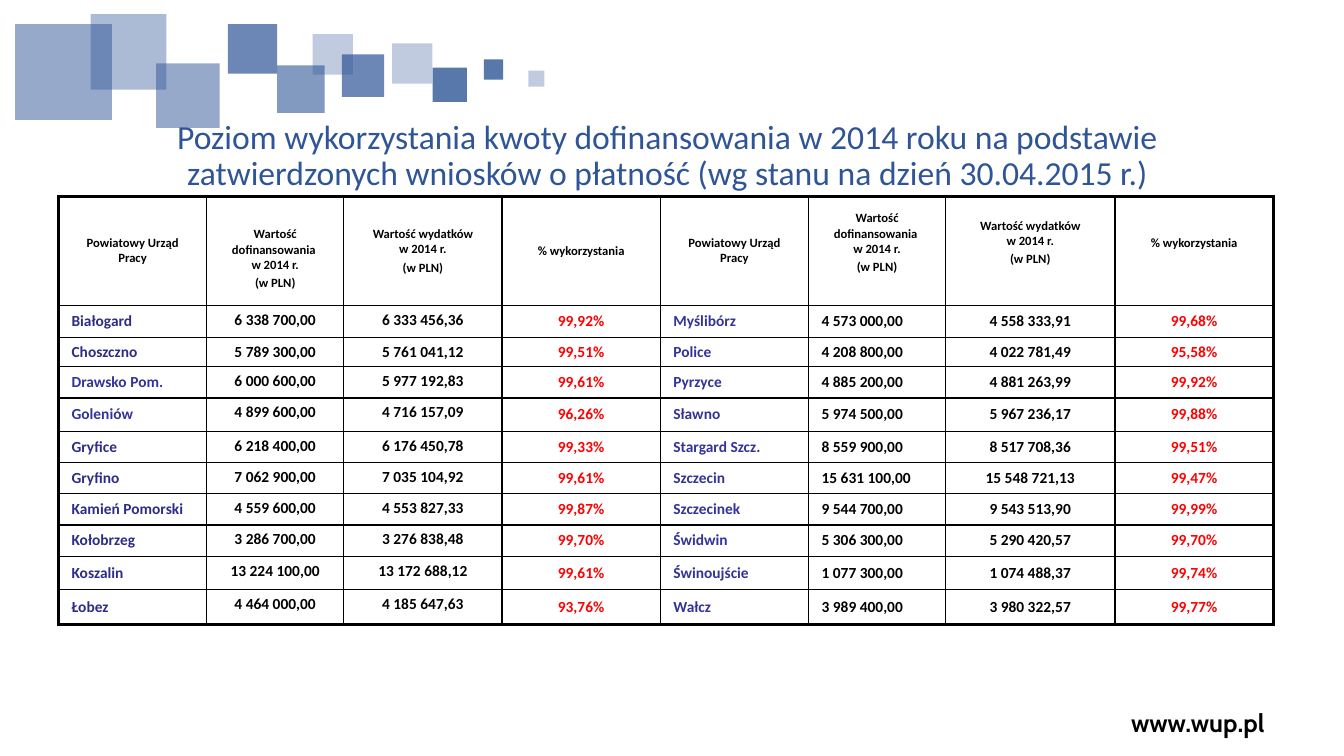
from dataclasses import dataclass

from lxml.etree import SubElement
from pptx import Presentation
from pptx.dml.color import RGBColor
from pptx.enum.shapes import MSO_SHAPE
from pptx.enum.text import MSO_ANCHOR, PP_ALIGN
from pptx.oxml.ns import qn
from pptx.util import Inches, Pt


@dataclass(frozen=True)
class Theme:
    blue: str = "2F5597"
    black: str = "000000"
    red: str = "FF0000"
    navy: str = "2D2D87"
    indigo: str = "333399"
    body_font: str = "Calibri"
    site_font: str = "Cabin"
    title_size: float = 24
    site_size: float = 18
    header_size: float = 9
    row_size: float = 11
    thin: float = 1
    thick: float = 2.25


theme = Theme()


def write(frame, text, size, color=theme.black, font=theme.body_font, bold=True,
          align=PP_ALIGN.CENTER, spacing=None, gap=0):
    """Fill a text frame: \\n starts a paragraph, \\v a new line within it."""
    frame.word_wrap = True
    for index, line in enumerate(text.split("\n")):
        paragraph = frame.paragraphs[0] if index == 0 else frame.add_paragraph()
        paragraph.text = line
        paragraph.alignment = align
        if spacing:
            paragraph.line_spacing = spacing
        if index and gap:
            paragraph.space_before = Pt(gap)
        for run in paragraph.runs:
            run.font.size = Pt(size)
            run.font.name = font
            run.font.bold = bold
            run.font.color.rgb = RGBColor.from_string(color)
        for line_break in paragraph._p.findall(qn("a:br")):
            SubElement(line_break, qn("a:rPr"), sz=str(int(size * 100)))


def set_border(cell, side, width):
    line = SubElement(cell._tc.get_or_add_tcPr(), qn(f"a:ln{side}"), w=str(Pt(width)))
    fill = SubElement(line, qn("a:solidFill"))
    SubElement(fill, qn("a:srgbClr"), val=theme.black)


presentation = Presentation()
presentation.slide_width = Inches(13.33)
presentation.slide_height = Inches(7.5)
slide = presentation.slides.add_slide(presentation.slide_layouts[5])

# Web address
site = slide.shapes.add_textbox(Inches(10.38), Inches(6.97), Inches(3), Inches(0.4))
site.text_frame.vertical_anchor = MSO_ANCHOR.MIDDLE
write(site.text_frame, "www.wup.pl", theme.site_size, font=theme.site_font)

# Translucent squares: left, top, width, height, opacity in percent
squares = [
    (3.89, 0.43, 0.4, 0.4, 30), (4.29, 0.67, 0.34, 0.34, 80),
    (3.39, 0.54, 0.42, 0.42, 70), (0.15, 0.24, 0.96, 0.95, 50),
    (2.75, 0.65, 0.47, 0.47, 60), (1.55, 0.63, 0.63, 0.64, 50),
    (0.9, 0.14, 0.75, 0.75, 40), (4.8, 0.59, 0.19, 0.2, 80),
    (2.26, 0.24, 0.49, 0.49, 70), (3.1, 0.34, 0.4, 0.4, 30),
    (5.24, 0.7, 0.16, 0.16, 30),
]
ornament = slide.shapes.add_group_shape()
for *box, opacity in squares:
    square = ornament.shapes.add_shape(MSO_SHAPE.RECTANGLE, *map(Inches, box))
    square.shadow.inherit = False
    square.line.fill.background()
    square.fill.solid()
    square.fill.fore_color.rgb = RGBColor.from_string(theme.blue)
    color_element = square._element.spPr.find(qn("a:solidFill"))[0]
    SubElement(color_element, qn("a:alpha"), val=str(opacity * 1000))

# Title, in front of the squares
title = slide.shapes.title
title.left, title.top, title.width, title.height = map(Inches, (0.58, 1.12, 12.08, 0.72))
slide.shapes._spTree.append(title._element)
heading = title.text_frame
heading.vertical_anchor = MSO_ANCHOR.TOP
heading.margin_left = heading.margin_right = Inches(0.13)
heading.margin_top = heading.margin_bottom = Inches(0.07)
write(heading,
      "Poziom wykorzystania kwoty dofinansowania w 2014 roku na podstawie "
      "zatwierdzonych wniosków o płatność (wg stanu na dzień 30.04.2015 r.)",
      theme.title_size, color=theme.blue, bold=False, spacing=0.9)

# Table content
headers = [
    "Powiatowy Urząd Pracy",
    "Wartość dofinansowania \vw 2014 r.\n(w PLN)",
    "Wartość wydatków\vw 2014 r.\n(w PLN)",
    "% wykorzystania",
] * 2
offices = [
    ("Białogard", "6 338 700,00", "6 333 456,36", "99,92%",
     "Myślibórz", "4 573 000,00", "4 558 333,91", "99,68%"),
    ("Choszczno", "5 789 300,00", "5 761 041,12", "99,51%",
     "Police", "4 208 800,00", "4 022 781,49", "95,58%"),
    ("Drawsko Pom.", "6 000 600,00", "5 977 192,83", "99,61%",
     "Pyrzyce", "4 885 200,00", "4 881 263,99", "99,92%"),
    ("Goleniów", "4 899 600,00", "4 716 157,09", "96,26%",
     "Sławno", "5 974 500,00", "5 967 236,17", "99,88%"),
    ("Gryfice", "6 218 400,00", "6 176 450,78", "99,33%",
     "Stargard Szcz.", "8 559 900,00", "8 517 708,36", "99,51%"),
    ("Gryfino", "7 062 900,00", "7 035 104,92", "99,61%",
     "Szczecin", "15 631 100,00", "15 548 721,13", "99,47%"),
    ("Kamień Pomorski", "4 559 600,00", "4 553 827,33", "99,87%",
     "Szczecinek", "9 544 700,00", "9 543 513,90", "99,99%"),
    ("Kołobrzeg", "3 286 700,00", "3 276 838,48", "99,70%",
     "Świdwin", "5 306 300,00", "5 290 420,57", "99,70%"),
    ("Koszalin", "13 224 100,00", "13 172 688,12", "99,61%",
     "Świnoujście", "1 077 300,00", "1 074 488,37", "99,74%"),
    ("Łobez", "4 464 000,00", "4 185 647,63", "93,76%",
     "Wałcz", "3 989 400,00", "3 980 322,57", "99,77%"),
]
indigo_left_offices = ("Drawsko Pom.", "Goleniów")
column_colors = [theme.navy, theme.black, theme.black, theme.red,
                 theme.indigo, theme.black, theme.black, theme.red]
left_aligned_columns = (0, 4, 5)
top_anchored_columns = (1, 2)
column_widths = [1.47, 1.36, 1.57, 1.57, 1.47, 1.36, 1.68, 1.57]
row_heights = [1.08, 0.32, 0.28, 0.31, 0.33, 0.31, 0.31, 0.31, 0.31, 0.33, 0.35]
# Extra top and bottom margins that place each header vertically
header_top = [0, 0.16, 0, 0, 0, 0, 0, 0]
header_bottom = [0, 0, 0, 0, 0, 0.16, 0.16, 0.16]

# Table
rows = [headers, *offices]
last_row, last_column = len(rows) - 1, len(headers) - 1
table = slide.shapes.add_table(len(rows), len(headers), Inches(0.58), Inches(1.95),
                               Inches(12.07), Inches(4.24)).table
table.first_row = table.horz_banding = False
for column, width in zip(table.columns, column_widths):
    column.width = Inches(width)
for row, height in zip(table.rows, row_heights):
    row.height = Inches(height)

for r, values in enumerate(rows):
    for c, value in enumerate(values):
        cell = table.cell(r, c)
        outer_sides = {"L": c == 0, "R": c == last_column, "T": r == 0, "B": r == last_row}
        for side, is_outer in outer_sides.items():
            set_border(cell, side, theme.thick if is_outer else theme.thin)
        cell.fill.background()
        cell.margin_left = cell.margin_right = Inches(0.13)
        cell.margin_top = cell.margin_bottom = Inches(0.05)
        cell.vertical_anchor = MSO_ANCHOR.MIDDLE
        if r == 0:
            cell.margin_top = Inches(0.05 + header_top[c])
            cell.margin_bottom = Inches(0.05 + header_bottom[c])
            write(cell.text_frame, value, theme.header_size, gap=2)
            continue
        if c in top_anchored_columns:
            cell.vertical_anchor = MSO_ANCHOR.TOP
        write(cell.text_frame, value, theme.row_size,
              color=theme.indigo if value in indigo_left_offices else column_colors[c],
              align=PP_ALIGN.LEFT if c in left_aligned_columns else PP_ALIGN.CENTER)

presentation.save("out.pptx")
